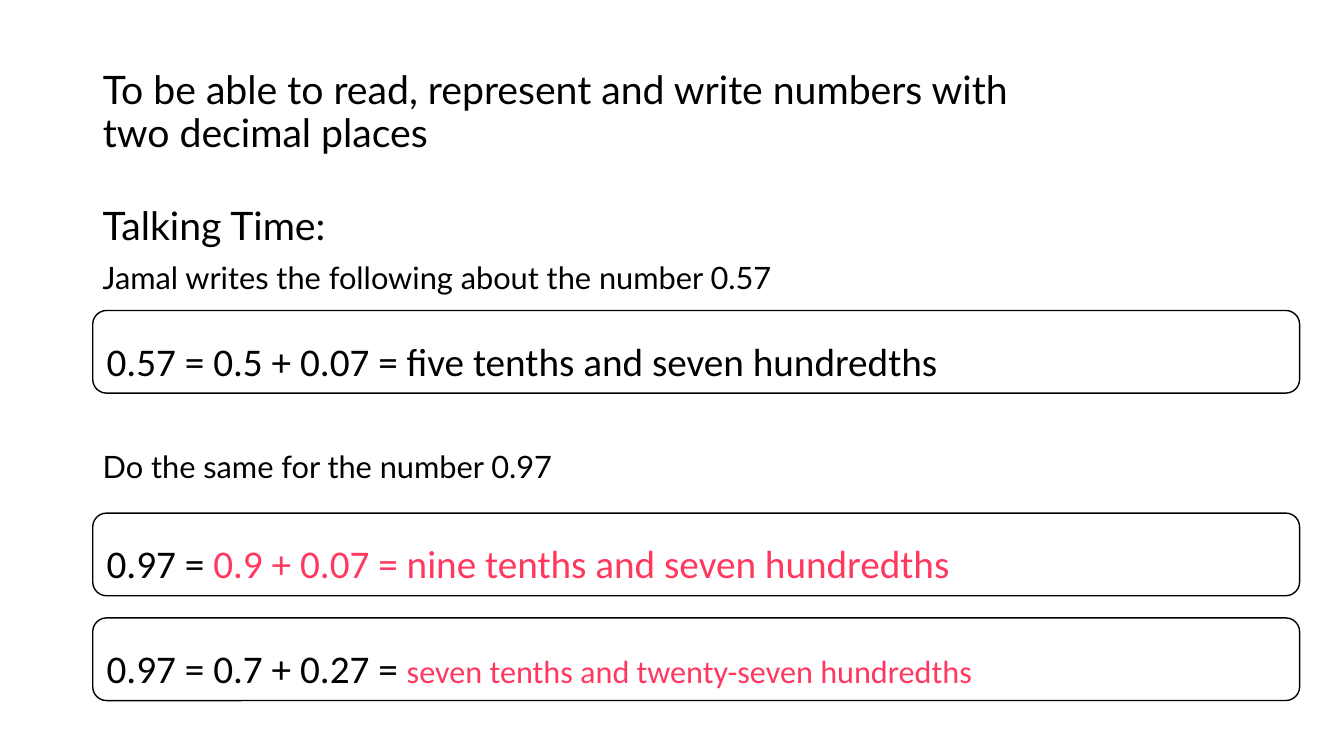
from dataclasses import dataclass

from pptx import Presentation
from pptx.dml.color import RGBColor
from pptx.enum.shapes import MSO_SHAPE
from pptx.enum.text import MSO_ANCHOR, MSO_AUTO_SIZE, PP_ALIGN
from pptx.util import Inches, Pt


@dataclass(frozen=True)
class Theme:
    text: RGBColor = RGBColor(0, 0, 0)
    answer: RGBColor = RGBColor(0xFF, 0x38, 0x60)
    paper: RGBColor = RGBColor(0xFF, 0xFF, 0xFF)
    main_font: str = "Lato"
    box_font: str = "Calibri"
    heading: int = 28
    prompt: int = 22
    long_answer: int = 23


theme = Theme()

TITLE = "To be able to read, represent and write numbers with two decimal places"
PROMPTS = [
    ("Talking Time:", theme.heading, 0),
    ("Jamal writes the following about the number 0.57", theme.prompt, 10),
    ("Do the same for the number 0.97", theme.prompt, 111),
]
EQUATIONS = [
    (3.08, [("0.57 = 0.5 + 0.07 = five tenths and seven hundredths", theme.text, theme.heading)]),
    (5.09, [
        ("0.97 = ", theme.text, theme.heading),
        ("0.9 + 0.07 = nine tenths and seven hundredths", theme.answer, theme.heading),
    ]),
    (6.13, [
        ("0.97 = 0.7 + 0.27 = ", theme.text, theme.heading),
        ("seven tenths and twenty-seven hundredths", theme.answer, theme.long_answer),
    ]),
]
LEFT = Inches(0.92)


def style(font, name, size, color):
    font.name = name
    font.size = Pt(size)
    font.color.rgb = color


def add_title(slide):
    title = slide.shapes.title
    title.left, title.top = LEFT, Inches(0.4)
    title.width, title.height = Inches(9.6), Inches(1.45)
    frame = title.text_frame
    frame.text = TITLE
    frame.word_wrap = True
    frame.auto_size = MSO_AUTO_SIZE.NONE
    frame.vertical_anchor = MSO_ANCHOR.MIDDLE
    paragraph = frame.paragraphs[0]
    paragraph.alignment = PP_ALIGN.LEFT
    paragraph.line_spacing = 0.9
    style(paragraph.font, theme.main_font, theme.heading, theme.text)


def add_prompts(slide):
    shape = slide.shapes.add_textbox(LEFT, Inches(2), Inches(11.5), Inches(4.76))
    frame = shape.text_frame
    frame.word_wrap = True
    for index, (text, size, space_before) in enumerate(PROMPTS):
        paragraph = frame.add_paragraph() if index else frame.paragraphs[0]
        paragraph.text = text
        paragraph.line_spacing = 0.9
        paragraph.space_before = Pt(space_before)
        style(paragraph.font, theme.main_font, size, theme.text)


def add_equation(slide, top, parts):
    shape = slide.shapes.add_shape(
        MSO_SHAPE.ROUNDED_RECTANGLE, LEFT, Inches(top), Inches(11.97), Inches(0.82)
    )
    shape.shadow.inherit = False
    shape.fill.solid()
    shape.fill.fore_color.rgb = theme.paper
    shape.line.color.rgb = theme.text
    shape.line.width = Pt(1)
    frame = shape.text_frame
    frame.word_wrap = True
    frame.vertical_anchor = MSO_ANCHOR.BOTTOM
    paragraph = frame.paragraphs[0]
    paragraph.alignment = PP_ALIGN.LEFT
    paragraph.line_spacing = 1.5
    for text, color, size in parts:
        run = paragraph.add_run()
        run.text = text
        style(run.font, theme.box_font, size, color)


def main():
    presentation = Presentation()
    presentation.slide_width = Inches(13.33)
    presentation.slide_height = Inches(7.5)
    slide = presentation.slides.add_slide(presentation.slide_layouts[5])
    add_title(slide)
    add_prompts(slide)
    for top, parts in EQUATIONS:
        add_equation(slide, top, parts)
    presentation.save("out.pptx")


if __name__ == "__main__":
    main()
